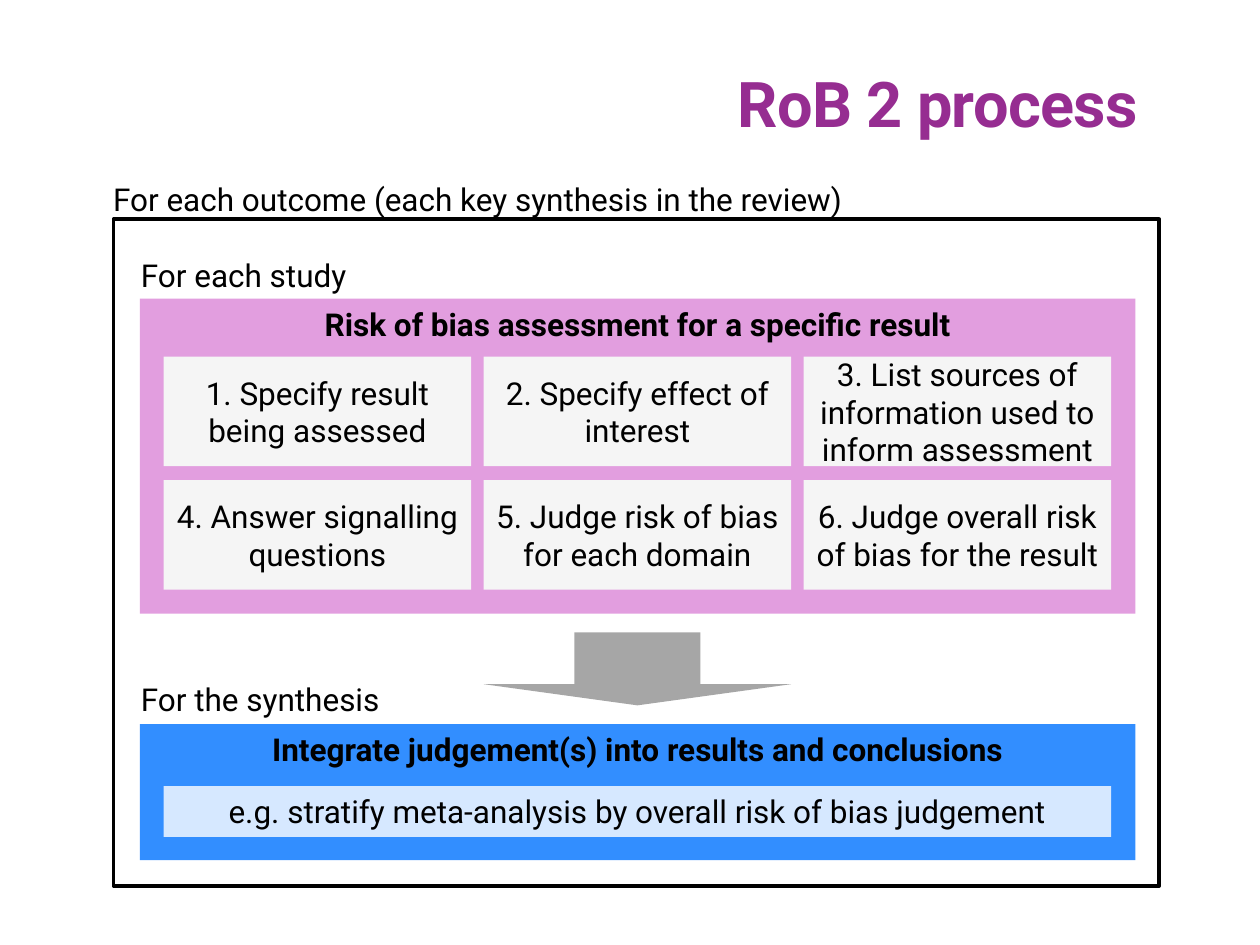
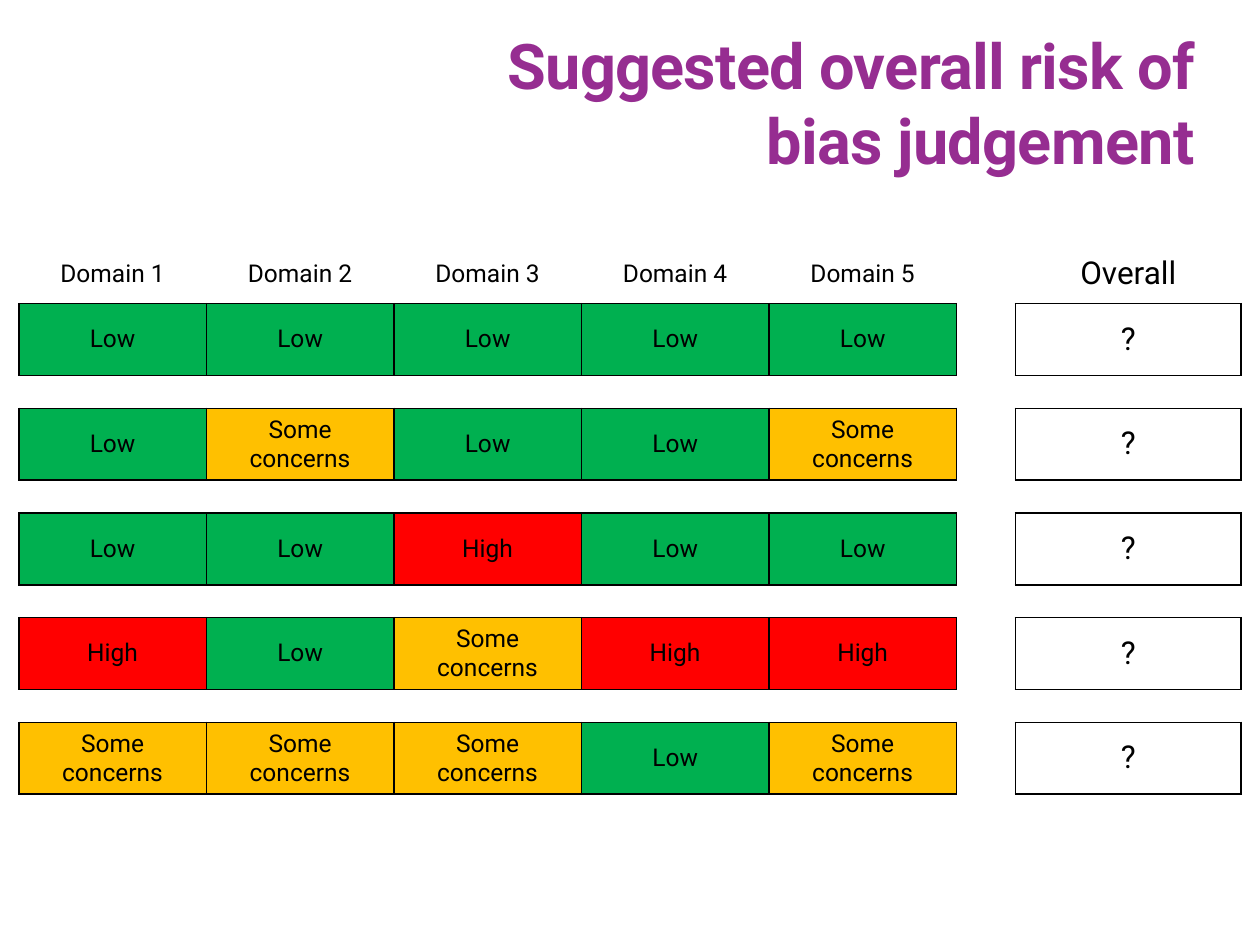
from lxml.etree import SubElement
from pptx import Presentation
from pptx.dml.color import RGBColor
from pptx.enum.shapes import MSO_SHAPE as Shape
from pptx.enum.text import MSO_ANCHOR as Anchor, MSO_AUTO_SIZE as AutoSize, PP_ALIGN as Align
from pptx.oxml.ns import qn
from pptx.util import Cm, Pt

FONT = "Roboto"
BLACK = RGBColor(0x00, 0x00, 0x00)
PURPLE = RGBColor(0x96, 0x2D, 0x91)
PINK = RGBColor(0xE2, 0x9E, 0xDF)
PALE_GREY = RGBColor(0xF5, 0xF5, 0xF5)
MID_GREY = RGBColor(0xA6, 0xA6, 0xA6)
BLUE = RGBColor(0x32, 0x8E, 0xFF)
PALE_BLUE = RGBColor(0xD6, 0xE8, 0xFF)
RISK_COLOURS = {
    "Low": RGBColor(0x00, 0xB0, 0x50),
    "Some concerns": RGBColor(0xFF, 0xC0, 0x00),
    "High": RGBColor(0xFF, 0x00, 0x00),
}
NO_TABLE_STYLE = "{2D5ABB26-0587-4C30-8999-92F81FD0307C}"

STEPS = [
    "1. Specify result being assessed",
    "2. Specify effect of interest",
    "3. List sources of information used to inform assessment",
    "4. Answer signalling questions",
    "5. Judge risk of bias for each domain",
    "6. Judge overall risk of bias for the result",
]
L, S, H = "Low", "Some concerns", "High"
JUDGEMENTS = [
    [L, L, L, L, L],
    [L, S, L, L, S],
    [L, L, H, L, L],
    [H, L, S, H, H],
    [S, S, S, L, S],
]
DOMAINS = 5


class Deck:
    """Holds the shared style and the current page."""

    def __init__(self):
        self.deck = Presentation()
        self.deck.slide_width, self.deck.slide_height = Cm(25.4), Cm(19.05)
        self.page = None

    def set_text(self, frame, text, size=18, bold=False, colour=BLACK, align=Align.LEFT):
        frame.text = text
        para = frame.paragraphs[0]
        para.alignment = align
        for span in para.runs:
            font = span.font
            font.name, font.size, font.bold = FONT, Pt(size), bold
            font.color.rgb = colour
        return para

    def new_page(self, title, left):
        self.page = self.deck.slides.add_slide(self.deck.slide_layouts[5])
        box = self.page.shapes.title
        box.left, box.top, box.width, box.height = Cm(left), Cm(0.53), Cm(16.48), Cm(3.05)
        frame = box.text_frame
        frame.word_wrap, frame.auto_size = True, AutoSize.NONE
        frame.vertical_anchor = Anchor.MIDDLE
        para = self.set_text(frame, title, 36, True, PURPLE, Align.RIGHT)
        para.runs[0].font._element.set("spc", "-40")

    def label(self, text, left, top, width=6.2):
        box = self.page.shapes.add_textbox(Cm(left), Cm(top), Cm(width), Cm(1.02))
        box.text_frame.word_wrap = True
        self.set_text(box.text_frame, text)

    def block(self, left, top, width, height, fill=None, text="", bold=False,
              anchor=Anchor.TOP, kind=Shape.RECTANGLE):
        box = self.page.shapes.add_shape(kind, Cm(left), Cm(top), Cm(width), Cm(height))
        box.shadow.inherit = False
        if fill is None:
            box.fill.background()
            box.line.color.rgb, box.line.width = BLACK, Pt(2)
        else:
            box.fill.solid()
            box.fill.fore_color.rgb = fill
            box.line.fill.background()
        if text:
            box.text_frame.word_wrap = True
            box.text_frame.vertical_anchor = anchor
            self.set_text(box.text_frame, text, bold=bold, align=Align.CENTER)
        return box

    def table(self, left, top, widths, heights):
        frame = self.page.shapes.add_table(len(heights), len(widths), Cm(left), Cm(top),
                                           Cm(sum(widths)), Cm(sum(heights)))
        table = frame.table
        table.first_row = table.horz_banding = False
        table._tbl.tblPr.find(qn("a:tableStyleId")).text = NO_TABLE_STYLE
        for column, width in zip(table.columns, widths):
            column.width = Cm(width)
        for row, height in zip(table.rows, heights):
            row.height = Cm(height)
        return table

    def cell(self, cell, text, size, fill, edges):
        cell.vertical_anchor = Anchor.MIDDLE
        properties = cell._tc.get_or_add_tcPr()
        for side, drawn in edges.items():
            line = SubElement(properties, qn(f"a:ln{side}"), w="12700")
            if drawn:
                colour = SubElement(line, qn("a:solidFill"))
                SubElement(colour, qn("a:srgbClr"), val=str(BLACK))
            else:
                SubElement(line, qn("a:noFill"))
        if fill is None:
            cell.fill.background()
        else:
            cell.fill.solid()
            cell.fill.fore_color.rgb = fill
        if text:
            self.set_text(cell.text_frame, text, size, align=Align.CENTER)
        else:
            # Small empty text keeps the spacer rows low
            cell.margin_top = cell.margin_bottom = 0
            SubElement(cell.text_frame.paragraphs[0]._p, qn("a:endParaRPr"), sz="400")


def process_page(deck):
    deck.new_page("RoB 2 process", 6.71)

    # Outcome frame
    deck.block(2.29, 4.42, 21.08, 13.44)
    deck.label("For each outcome (each key synthesis in the review)", 2.03, 3.51, 19.1)

    # Study assessment with its grid of steps
    deck.label("For each study", 2.59, 5.03)
    deck.block(2.82, 6.02, 20.07, 6.35, PINK,
               "Risk of bias assessment for a specific result", bold=True)
    for index, step in enumerate(STEPS):
        row, column = divmod(index, 3)
        deck.block(3.3 + 6.45 * column, 7.19 + 2.49 * row, 6.2, 2.21,
                   PALE_GREY, step, anchor=Anchor.MIDDLE)

    # Synthesis
    arrow = deck.block(9.75, 12.75, 6.2, 1.47, MID_GREY, kind=Shape.DOWN_ARROW)
    arrow.adjustments[0], arrow.adjustments[1] = 0.41, 0.29
    deck.label("For the synthesis", 2.59, 13.59)
    deck.block(2.82, 14.6, 20.07, 2.74, BLUE,
               "Integrate judgement(s) into results and conclusions", bold=True)
    deck.block(3.3, 15.85, 19.1, 1.02, PALE_BLUE,
               "e.g. stratify meta-analysis by overall risk of bias judgement")


def judgement_page(deck):
    deck.new_page("Suggested overall risk of bias judgement", 7.85)

    # Judgement rows alternate with spacer rows below the header
    rows = [[f"Domain {n + 1}" for n in range(DOMAINS)] + ["", "Overall"]]
    heights = [1.19]
    for judgements in JUDGEMENTS:
        if len(rows) > 1:
            rows.append([""] * (DOMAINS + 2))
            heights.append(0.66)
        rows.append(judgements + ["", "?"])
        heights.append(1.45)
    table = deck.table(0.38, 4.93, [3.78] * DOMAINS + [1.19, 4.55], heights)

    def boxed(row, column):
        return row % 2 == 1 and 0 <= column < DOMAINS + 2 and column != DOMAINS

    # An edge is drawn when the cell on either side of it is boxed
    neighbours = {"L": (0, -1), "R": (0, 1), "T": (-1, 0), "B": (1, 0)}
    for r, texts in enumerate(rows):
        for c, text in enumerate(texts):
            edges = {side: boxed(r, c) or (0 <= r + down < len(rows) and boxed(r + down, c + across))
                     for side, (down, across) in neighbours.items()}
            deck.cell(table.cell(r, c), text, 18 if c > DOMAINS else 14,
                      RISK_COLOURS.get(text), edges)


def main():
    deck = Deck()
    process_page(deck)
    judgement_page(deck)
    deck.deck.save("out.pptx")


if __name__ == "__main__":
    main()
